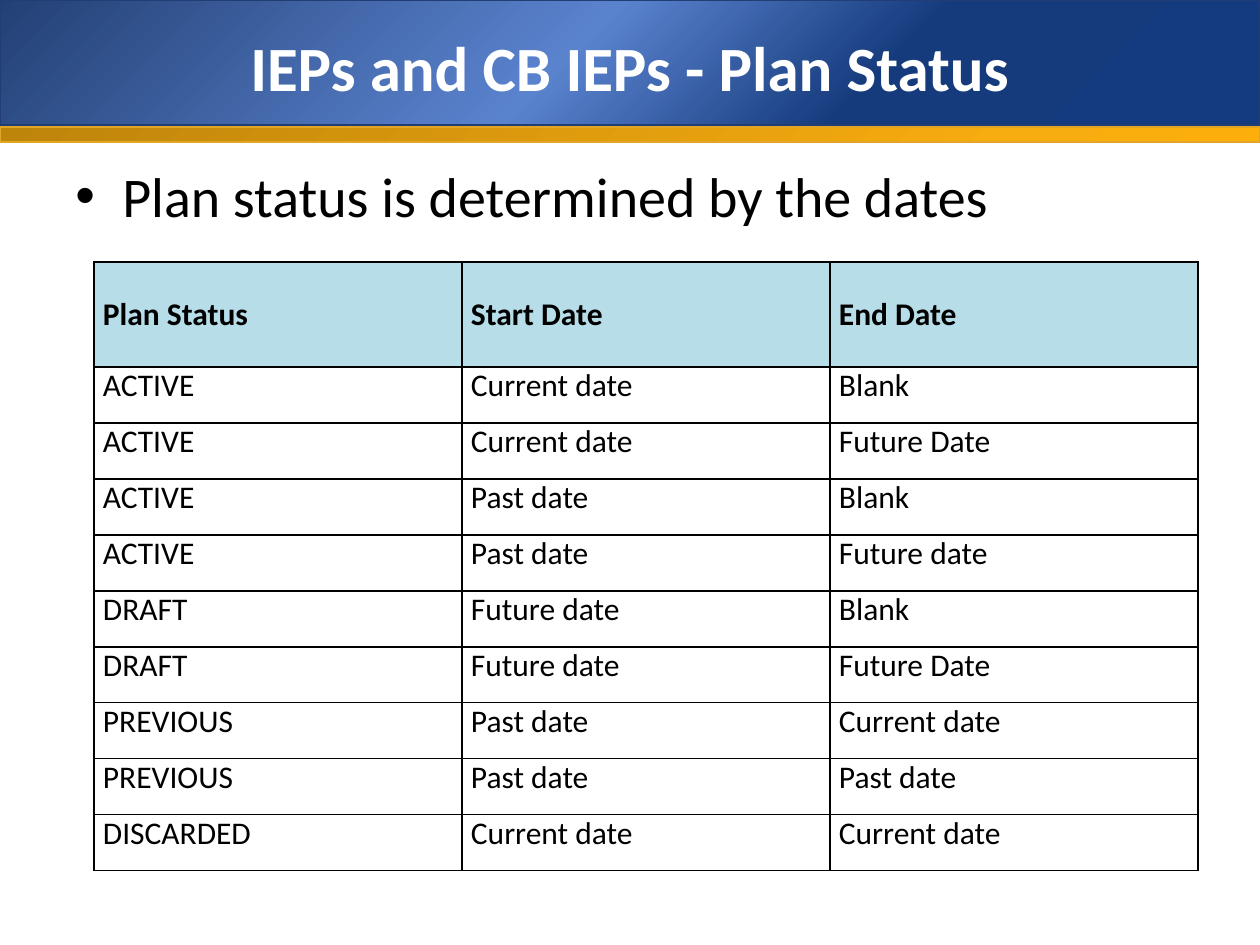
from dataclasses import dataclass

from lxml import etree
from pptx import Presentation
from pptx.dml.color import RGBColor
from pptx.enum.shapes import MSO_SHAPE
from pptx.enum.text import MSO_ANCHOR, PP_ALIGN
from pptx.oxml.ns import qn
from pptx.util import Emu, Pt

RECTANGLE = MSO_SHAPE.RECTANGLE
MIDDLE, TOP = MSO_ANCHOR.MIDDLE, MSO_ANCHOR.TOP
CENTER, LEFT = PP_ALIGN.CENTER, PP_ALIGN.LEFT
PX_PER_INCH = 126
BLANK_LAYOUT = 6


@dataclass(frozen=True)
class Theme:
    font: str = "Calibri"
    title_size: int = 36
    body_size: int = 32
    table_size: int = 18
    title_color: str = "FFFFFF"
    text_color: str = "000000"
    header_fill: str = "B6DDE8"
    border: str = "000000"
    border_width: float = 1
    band_line_width: float = 0.75
    blue_line: str = "203E74"
    blue_stops: tuple = ((0, "234075"), (45, "5A83CE"), (69, "163B7D"), (100, "143A80"))
    gold_line: str = "E2A626"
    gold_stops: tuple = ((0, "BE850B"), (80, "F7AC0F"), (100, "FCAF0B"))


def px(length):
    return Emu(round(length * 914400 / PX_PER_INCH))


def add_color(parent, color):
    etree.SubElement(parent, qn("a:srgbClr"), val=color)


class SlideBuilder:
    def __init__(self, slide, theme):
        self.slide = slide
        self.theme = theme

    def format_text(self, frame, text, size, color, bold=False, align=LEFT):
        frame.text = text
        paragraph = frame.paragraphs[0]
        paragraph.alignment = align
        for run in paragraph.runs:
            run.font.name = self.theme.font
            run.font.size = Pt(size)
            run.font.bold = bold
            run.font.color.rgb = RGBColor.from_string(color)
        return paragraph

    def band(self, left, top, width, height, stops, line):
        """Rectangle with a diagonal gradient."""
        band = self.slide.shapes.add_shape(RECTANGLE, *map(px, (left, top, width, height)))
        band.shadow.inherit = False
        band.line.color.rgb = RGBColor.from_string(line)
        band.line.width = Pt(self.theme.band_line_width)
        band.fill.gradient()
        gradient = band.fill._xPr.find(qn("a:gradFill"))
        for child in list(gradient):
            gradient.remove(child)
        stop_list = etree.SubElement(gradient, qn("a:gsLst"))
        for percent, color in stops:
            add_color(etree.SubElement(stop_list, qn("a:gs"), pos=str(percent * 1000)), color)
        etree.SubElement(gradient, qn("a:lin"), ang=str(45 * 60000), scaled="0")

    def text(self, left, top, width, height, text, size, color,
             bold=False, align=LEFT, anchor=TOP):
        box = self.slide.shapes.add_textbox(*map(px, (left, top, width, height)))
        frame = box.text_frame
        frame.word_wrap = True
        frame.vertical_anchor = anchor
        return self.format_text(frame, text, size, color, bold, align)

    def bullet(self, left, top, width, height, text, indent):
        theme = self.theme
        paragraph = self.text(left, top, width, height, text, theme.body_size, theme.text_color)
        paragraph.space_before = Pt(round(theme.body_size * 0.2, 1))
        properties = paragraph._p.get_or_add_pPr()
        properties.set("marL", str(px(indent)))
        properties.set("indent", str(-px(indent)))
        etree.SubElement(properties, qn("a:buFont"), typeface="Arial")
        etree.SubElement(properties, qn("a:buChar"), char="•")

    def cell_borders(self, cell):
        properties = cell._tc.get_or_add_tcPr()
        for position, side in enumerate(("lnL", "lnR", "lnT", "lnB")):
            line = etree.Element(qn("a:" + side), w=str(Pt(self.theme.border_width)))
            add_color(etree.SubElement(line, qn("a:solidFill")), self.theme.border)
            properties.insert(position, line)

    def table(self, left, top, column_width, header_height, row_height, rows):
        theme = self.theme
        columns = len(rows[0])
        height = header_height + row_height * (len(rows) - 1)
        table = self.slide.shapes.add_table(
            len(rows), columns, *map(px, (left, top, column_width * columns, height))).table
        table.first_row = table.horz_banding = False
        for column in table.columns:
            column.width = px(column_width)
        for r, values in enumerate(rows):
            header = r == 0
            table.rows[r].height = px(header_height if header else row_height)
            for c, value in enumerate(values):
                cell = table.cell(r, c)
                cell.margin_left = cell.margin_right = px(9)
                cell.margin_top = cell.margin_bottom = 0
                cell.vertical_anchor = MIDDLE if header else TOP
                if header:
                    cell.fill.solid()
                    cell.fill.fore_color.rgb = RGBColor.from_string(theme.header_fill)
                else:
                    cell.fill.background()
                self.format_text(cell.text_frame, value, theme.table_size,
                                 theme.text_color, bold=header)
                self.cell_borders(cell)


PLAN_STATUSES = [
    ("Plan Status", "Start Date", "End Date"),
    ("ACTIVE", "Current date", "Blank"),
    ("ACTIVE", "Current date", "Future Date"),
    ("ACTIVE", "Past date", "Blank"),
    ("ACTIVE", "Past date", "Future date"),
    ("DRAFT", "Future date", "Blank"),
    ("DRAFT", "Future date", "Future Date"),
    ("PREVIOUS", "Past date", "Current date"),
    ("PREVIOUS", "Past date", "Past date"),
    ("DISCARDED", "Current date", "Current date"),
]


def main():
    presentation = Presentation()
    presentation.slide_width, presentation.slide_height = px(1260), px(945)
    theme = Theme()
    slide = presentation.slides.add_slide(presentation.slide_layouts[BLANK_LAYOUT])
    builder = SlideBuilder(slide, theme)

    # Header bands and title
    builder.band(0, 0, 1260, 125, theme.blue_stops, theme.blue_line)
    builder.band(0, 127, 1260, 15, theme.gold_stops, theme.gold_line)
    builder.text(63, 18, 1134, 97, "IEPs and CB IEPs - Plan Status", theme.title_size,
                 theme.title_color, bold=True, align=CENTER, anchor=MIDDLE)

    # Rule for the plan status
    builder.bullet(63, 155, 1134, 745, "Plan status is determined by the dates", indent=47)

    # Status by start and end date
    builder.table(94, 262, 368, 105, 56, PLAN_STATUSES)

    presentation.save("out.pptx")


if __name__ == "__main__":
    main()
